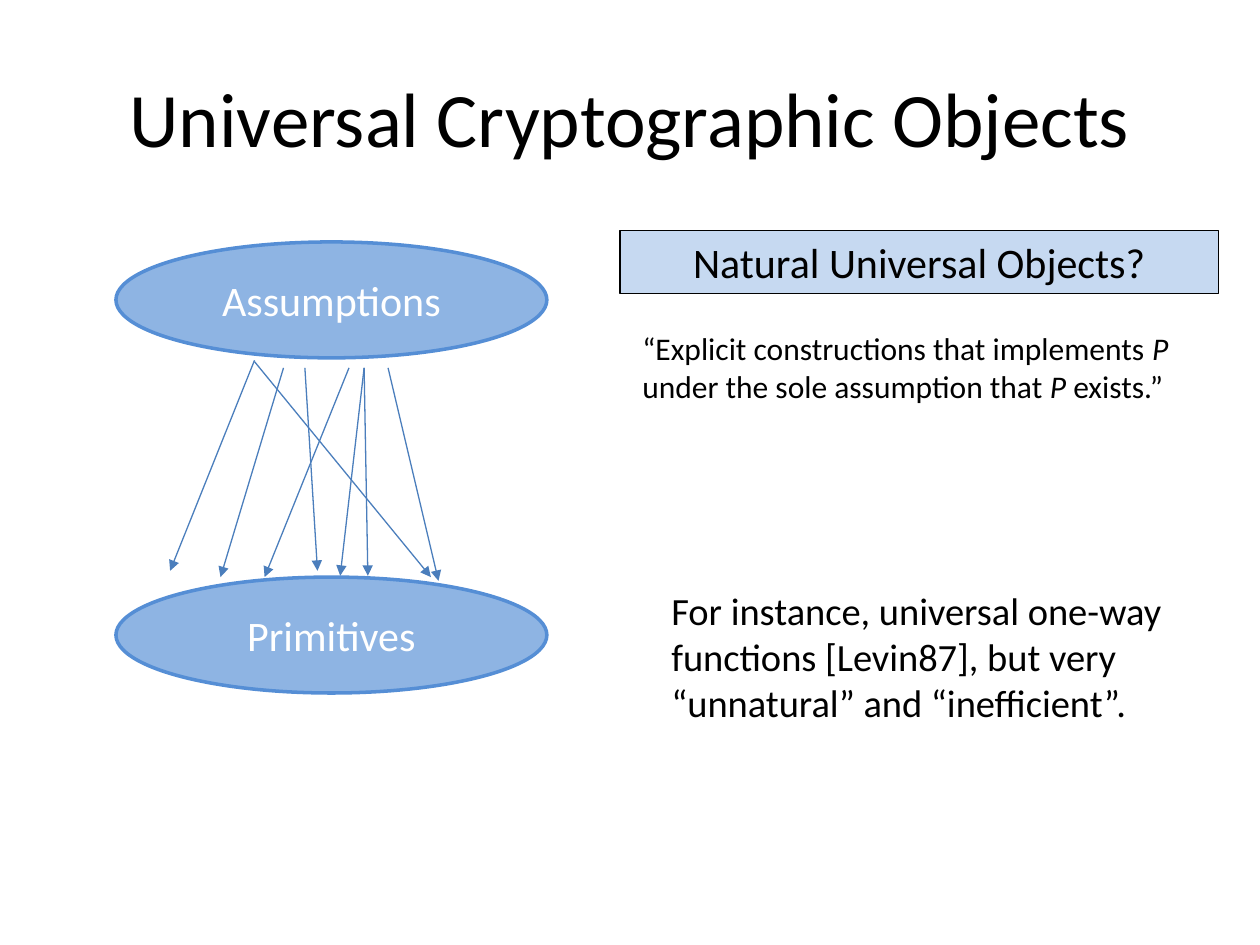
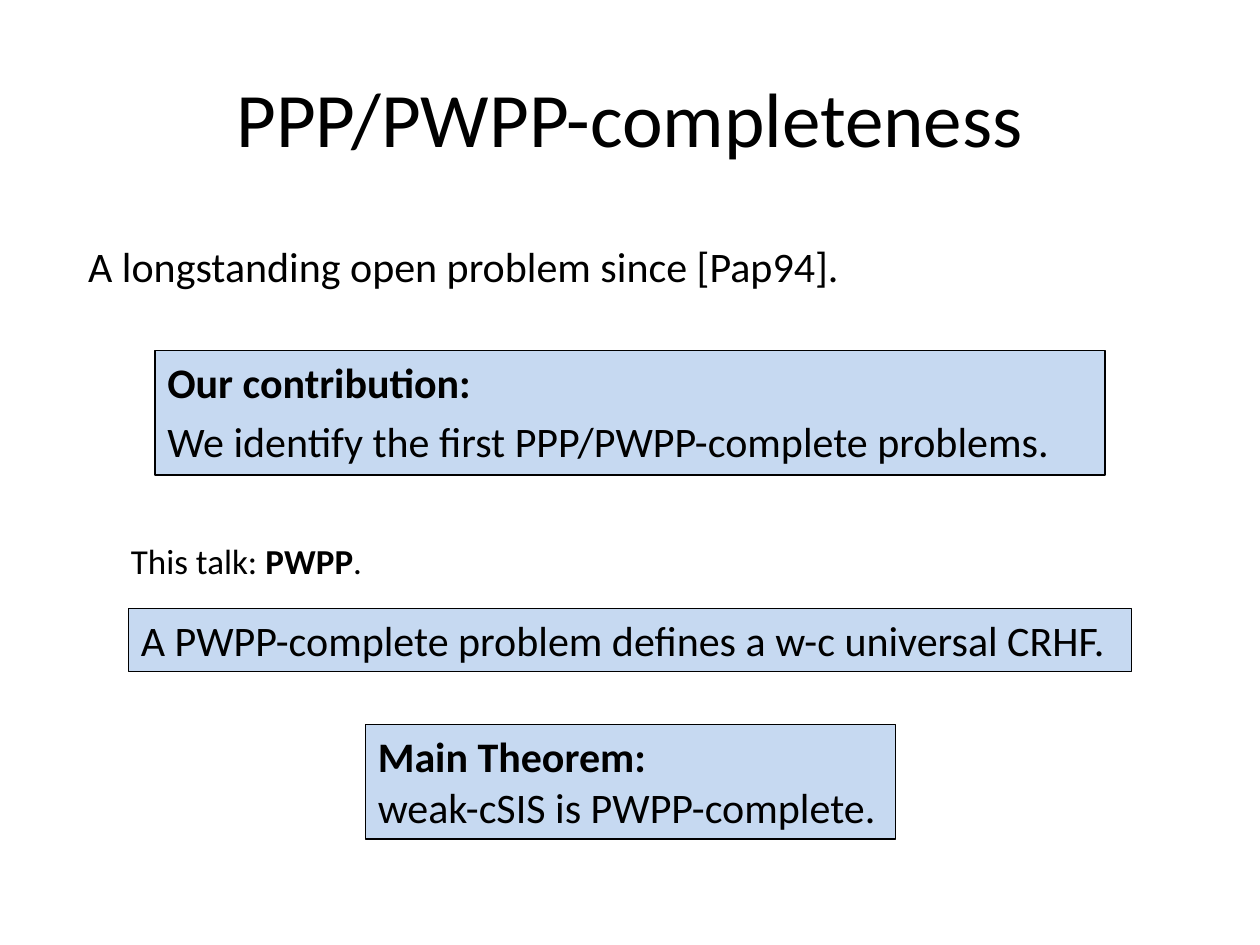
from dataclasses import dataclass
from lxml.etree import SubElement
from pptx import Presentation
from pptx.dml.color import RGBColor
from pptx.enum.shapes import MSO_CONNECTOR, MSO_SHAPE
from pptx.enum.text import MSO_ANCHOR, MSO_AUTO_SIZE, PP_ALIGN
from pptx.oxml.ns import qn
from pptx.util import Inches, Pt


@dataclass(frozen=True)
class Theme:
    font: str = "Calibri"
    ink: str = "000000"
    white: str = "FFFFFF"
    oval: str = "8EB4E3"
    rim: str = "558ED5"
    arrow: str = "4B7EBC"
    panel: str = "C6D9F1"
    title: int = 44
    text: int = 24
    mid: int = 22
    small: int = 20
    quote: int = 18
    hair: float = 0.75
    thick: float = 2


# The grid has 100 columns and 75 rows
COLS, ROWS = 100, 75


class Deck:
    def __init__(self, theme):
        self.theme = theme
        self.show = Presentation()
        self.show.slide_width = Inches(10)
        self.show.slide_height = Inches(7.5)
        self.slide = None

    def grid(self, col, row):
        return (round(self.show.slide_width * col / COLS),
                round(self.show.slide_height * row / ROWS))

    def area(self, spot):
        return self.grid(*spot[:2]) + self.grid(*spot[2:])

    def move(self, item, spot):
        item.left, item.top, item.width, item.height = self.area(spot)

    def put(self, frame, paras, size, color=None, align=PP_ALIGN.LEFT, gap=0):
        """Each paragraph is a list of (text, style) runs; style is "", "b" or "i"."""
        for n, runs in enumerate(paras):
            para = frame.add_paragraph() if n else frame.paragraphs[0]
            para.alignment = align
            para.space_before = Pt(gap)
            for text, style in runs:
                run = para.add_run()
                run.text = text
                font = run.font
                font.name, font.size = self.theme.font, Pt(size)
                font.bold, font.italic = style == "b", style == "i"
                font.color.rgb = RGBColor.from_string(color or self.theme.ink)

    def page(self, title, layout):
        self.slide = self.show.slides.add_slide(self.show.slide_layouts[layout])
        head = self.slide.shapes.title
        self.move(head, (5, 3, 90, 12.5))
        head.text_frame.vertical_anchor = MSO_ANCHOR.MIDDLE
        self.put(head.text_frame, [[(title, "")]], self.theme.title,
                 align=PP_ALIGN.CENTER)

    def body(self, spot, paras):
        item = self.slide.placeholders[1]
        self.move(item, spot)
        frame = item.text_frame
        frame.margin_left, frame.margin_top = Inches(0.2), Inches(0.16)
        self.put(frame, paras, self.theme.text)
        for para in frame.paragraphs:
            props = para._p.get_or_add_pPr()
            props.set("marL", "0")
            props.set("indent", "0")
            SubElement(props, qn("a:buNone"))

    def shape(self, kind, spot, fill, line, width):
        item = self.slide.shapes.add_shape(kind, *self.area(spot))
        item.shadow.inherit = False
        item.fill.solid()
        item.fill.fore_color.rgb = RGBColor.from_string(fill)
        item.line.color.rgb = RGBColor.from_string(line)
        item.line.width = Pt(width)
        return item.text_frame

    def oval(self, spot, text):
        look = self.theme
        frame = self.shape(MSO_SHAPE.OVAL, spot, look.oval, look.rim, look.thick)
        frame.vertical_anchor = MSO_ANCHOR.MIDDLE
        self.put(frame, [[(text, "")]], look.text, look.white, PP_ALIGN.CENTER)

    def fit(self, frame, wrap):
        frame.word_wrap = wrap
        frame.auto_size = MSO_AUTO_SIZE.SHAPE_TO_FIT_TEXT
        frame.vertical_anchor = MSO_ANCHOR.TOP

    def panel(self, spot, paras, align=PP_ALIGN.LEFT, gap=0, wrap=True):
        look = self.theme
        frame = self.shape(MSO_SHAPE.RECTANGLE, spot, look.panel, look.ink, look.hair)
        self.fit(frame, wrap)
        self.put(frame, paras, look.text, align=align, gap=gap)

    def note(self, spot, runs, size, wrap=True):
        frame = self.slide.shapes.add_textbox(*self.area(spot)).text_frame
        self.fit(frame, wrap)
        self.put(frame, [runs], size)

    def arrow(self, start, end):
        item = self.slide.shapes.add_connector(
            MSO_CONNECTOR.STRAIGHT, *self.grid(*start), *self.grid(*end))
        item.line.color.rgb = RGBColor.from_string(self.theme.arrow)
        item.line.width = Pt(self.theme.hair)
        props = item._element.spPr
        SubElement(props.find(qn("a:ln")), qn("a:tailEnd"), type="triangle")
        SubElement(props, qn("a:effectLst"))


def objects(deck):
    look = deck.theme
    deck.page("Universal Cryptographic Objects", 5)

    # Assumptions lead to primitives
    for row, name in ((19.2, "Assumptions"), (45.8, "Primitives")):
        deck.oval((9.2, row, 34.2, 9.2), name)
    links = (
        ((22.5, 29.2), (17.5, 45.8)),
        ((27.7, 29.2), (21, 45.8)),
        ((20.2, 28.7), (34.2, 45.8)),
        ((20.2, 28.6), (13.5, 45.3)),
        ((28.9, 29.2), (27, 45.7)),
        ((28.9, 29.2), (29.2, 45.7)),
        ((30.8, 29.2), (34.8, 46.1)),
        ((24.2, 29.2), (25.2, 45.3)),
    )
    for start, end in links:
        deck.arrow(start, end)

    # Question, example and definition
    deck.panel((49.2, 18.3, 47.5, 5), [[("Natural Universal Objects?", "")]],
               PP_ALIGN.CENTER)
    deck.note((52.3, 46.1, 42.7, 12.1),
              [("For instance, universal one-way functions [Levin87], "
                "but very “unnatural” and “inefficient”.", "")], look.mid)
    deck.note((50, 25.6, 50, 7.1),
              [("“Explicit constructions that implements ", ""), ("P", "i"),
               (" under the sole assumption that ", ""), ("P ", "i"),
               ("exists.”", "")], look.quote)


def complete(deck):
    deck.page("PPP/PWPP-completeness", 1)

    # Open problem and contribution
    deck.body((5, 17.5, 90, 8.3),
              [[("A longstanding open problem since [Pap94].", "")]])
    deck.panel((12.3, 27.8, 75.4, 9.9),
               [[("Our contribution:", "b")],
                [("We identify the first PPP/PWPP-complete problems.", "")]], gap=4.8)

    # Focus of the talk and theorem
    deck.note((9.4, 42.3, 20.5, 4.4),
              [("This talk: ", ""), ("PWPP", "b"), (".", "")],
              deck.theme.small, wrap=False)
    deck.panel((10.2, 48.3, 79.6, 5),
               [[("A PWPP-complete problem defines a w-c universal CRHF.", "")]])
    deck.panel((29, 57.5, 42.1, 9.1),
               [[("Main Theorem:", "b")], [("weak-cSIS is PWPP-complete.", "")]],
               wrap=False)


def main():
    deck = Deck(Theme())
    objects(deck)
    complete(deck)
    deck.show.save("out.pptx")


if __name__ == "__main__":
    main()
